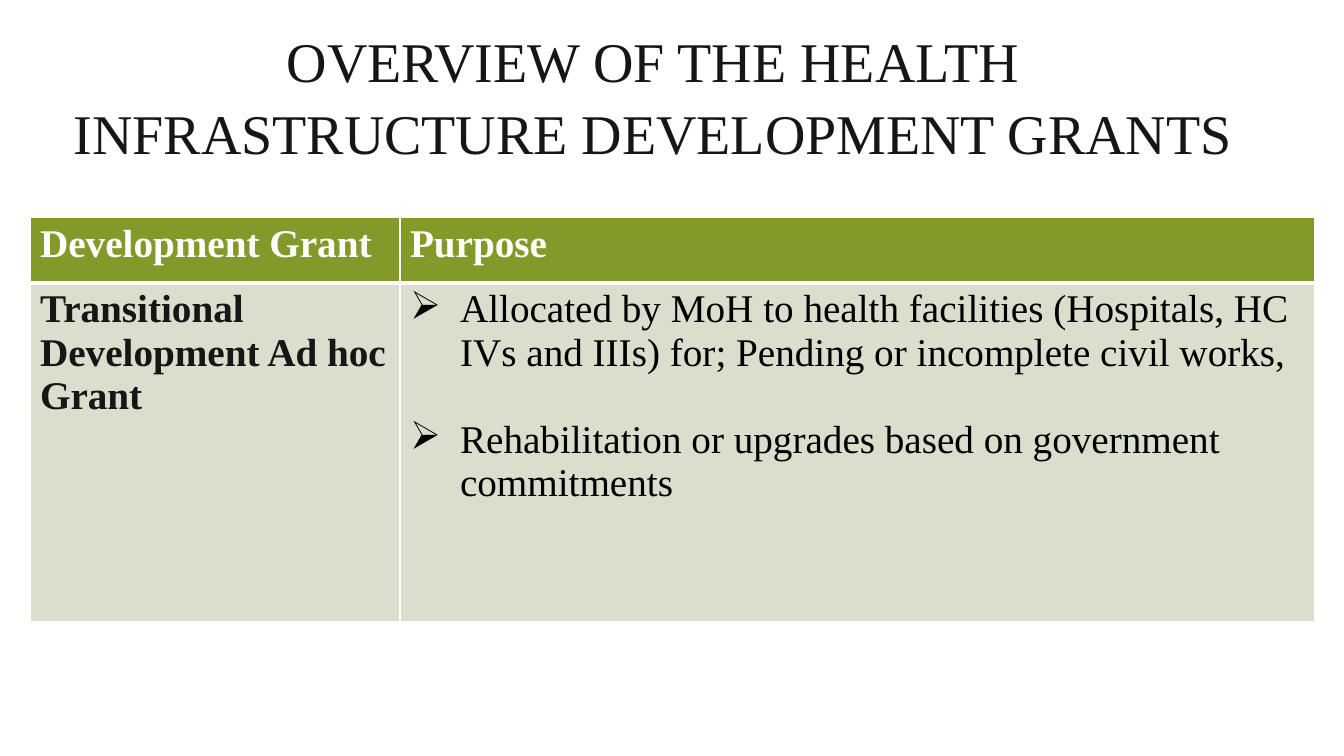
import pptx
import pptx.util
import pptx.dml.color
import pptx.enum.text
import pptx.oxml

# Content
TITLE = "OVERVIEW OF THE HEALTH INFRASTRUCTURE DEVELOPMENT GRANTS"
HEADS = ["Development Grant", "Purpose"]
GRANT = "Transitional Development Ad hoc Grant"
AIMS = [
    "Allocated by MoH to health facilities (Hospitals, HC IVs and IIIs) for; "
    "Pending or incomplete civil works,",
    "Rehabilitation or upgrades based on government commitments",
]

# Theme: type sizes, spacing and borders in points
THEME = {
    "font": "Times New Roman", "title": 40, "body": 28, "gap": 31,
    "ink": "161616", "black": "000000", "white": "FFFFFF",
    "olive": "83992A", "sage": "D9DECD", "thin": 1, "thick": 3,
}

# Layout in px
PX = 914400 / 100.8
SLIDE = (1344, 756)
HEAD_BOX = {"left": 60, "top": 15, "width": 1186, "height": 157}
GRID = (30, 217)
COLS = [370, 915]
ROWS = [66, 339]
INDENT = 50

NS = 'xmlns:a="http://schemas.openxmlformats.org/drawingml/2006/main"'


def emu(px):
    return pptx.util.Emu(round(px * PX))


def color(name):
    return pptx.dml.color.RGBColor.from_string(THEME[name])


def style(para, size, ink, bold):
    look = {"name": THEME["font"], "size": pptx.util.Pt(THEME[size]), "bold": bold}
    for key, val in look.items():
        setattr(para.font, key, val)
    para.font.color.rgb = color(ink)


def border(cell, sides):
    props = cell._tc.get_or_add_tcPr()
    for side, width in sides.items():
        props.append(pptx.oxml.parse_xml(
            f'<a:ln{side} {NS} w="{pptx.util.Pt(THEME[width])}"><a:solidFill>'
            f'<a:srgbClr val="{THEME["white"]}"/></a:solidFill></a:ln{side}>'))


def bullet(para):
    props = para._p.get_or_add_pPr()
    props.set("marL", str(emu(INDENT)))
    props.set("indent", str(-emu(INDENT)))
    props.append(pptx.oxml.parse_xml(f'<a:buChar {NS} char="➢"/>'))


def fill_cell(cell, lines, back, ink, bold, sides, marked):
    border(cell, sides)
    cell.fill.solid()
    cell.fill.fore_color.rgb = color(back)
    frame = cell.text_frame
    for num, line in enumerate(lines):
        para = frame.add_paragraph() if num else frame.paragraphs[0]
        para.text = line
        if num:
            para.space_before = pptx.util.Pt(THEME["gap"])
        if marked:
            bullet(para)
        style(para, "body", ink, bold)


def add_title(slide):
    title = slide.shapes.title
    for key, val in HEAD_BOX.items():
        setattr(title, key, emu(val))
    frame = title.text_frame
    frame.text = TITLE
    form = {"word_wrap": True,
            "auto_size": pptx.enum.text.MSO_AUTO_SIZE.NONE,
            "vertical_anchor": pptx.enum.text.MSO_ANCHOR.MIDDLE}
    for key, val in form.items():
        setattr(frame, key, val)
    para = frame.paragraphs[0]
    para.alignment = pptx.enum.text.PP_ALIGN.CENTER
    para.line_spacing = 1.08
    style(para, "title", "ink", False)


def add_grid(slide):
    box = [emu(v) for v in (*GRID, sum(COLS), sum(ROWS))]
    table = slide.shapes.add_table(len(ROWS), len(COLS), *box).table
    for col, width in zip(table.columns, COLS):
        col.width = emu(width)
    for row, height in zip(table.rows, ROWS):
        row.height = emu(height)

    # Header row, with a thick rule below it
    thin = dict.fromkeys("LRTB", "thin")
    for num, head in enumerate(HEADS):
        fill_cell(table.cell(0, num), [head], "olive", "white", True,
                  thin | {"B": "thick"}, False)

    # Grant row
    sides = thin | {"T": "thick"}
    fill_cell(table.cell(1, 0), [GRANT], "sage", "ink", True, sides, False)
    fill_cell(table.cell(1, 1), AIMS, "sage", "black", False, sides, True)


def main():
    deck = pptx.Presentation()
    deck.slide_width, deck.slide_height = (emu(v) for v in SLIDE)
    slide = deck.slides.add_slide(deck.slide_layouts[5])
    slide.background.fill.solid()
    slide.background.fill.fore_color.rgb = color("white")
    add_title(slide)
    add_grid(slide)
    deck.save("out.pptx")


if __name__ == "__main__":
    main()
